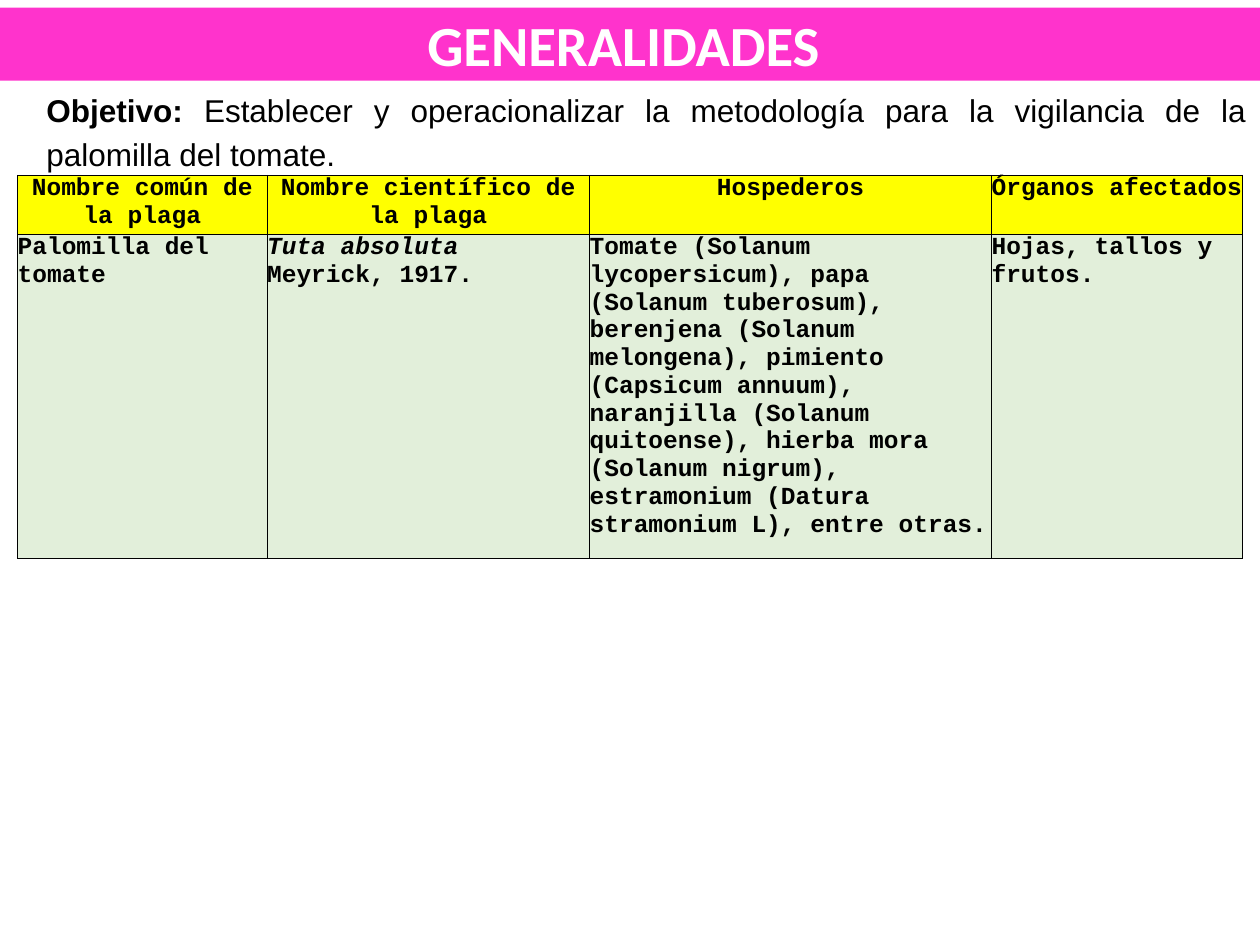
from lxml.etree import SubElement
from pptx import Presentation
from pptx.dml.color import RGBColor
from pptx.enum.text import MSO_ANCHOR, MSO_AUTO_SIZE, PP_ALIGN
from pptx.oxml.ns import qn
from pptx.util import Inches, Pt

PINK = RGBColor(0xFF, 0x33, 0xCC)
YELLOW = RGBColor(0xFF, 0xFF, 0x00)
GREEN = RGBColor(0xE2, 0xEF, 0xDA)
WHITE = RGBColor(0xFF, 0xFF, 0xFF)
BLACK = RGBColor(0x00, 0x00, 0x00)


def add_run(paragraph, text, font_name, size, color=BLACK, bold=True, italic=False):
    run = paragraph.add_run()
    run.text = text
    run.font.name = font_name
    run.font.size = Pt(size)
    run.font.color.rgb = color
    run.font.bold = bold
    run.font.italic = italic


def add_borders(cell):
    """Draw a thin black line on all four sides of the cell."""
    properties = cell._tc.get_or_add_tcPr()
    for side in ("a:lnL", "a:lnR", "a:lnT", "a:lnB"):
        line = SubElement(properties, qn(side), w=str(Pt(0.5)))
        fill = SubElement(line, qn("a:solidFill"))
        SubElement(fill, qn("a:srgbClr"), val=str(BLACK))


presentation = Presentation()
presentation.slide_width = Inches(10)
presentation.slide_height = Inches(7.5)
slide = presentation.slides.add_slide(presentation.slide_layouts[5])

# Title band
title = slide.shapes.title
title.left, title.top = Inches(0), Inches(0.06)
title.width, title.height = Inches(10), Inches(0.58)
title.fill.solid()
title.fill.fore_color.rgb = PINK
title.text_frame.auto_size = MSO_AUTO_SIZE.NONE
title.text_frame.vertical_anchor = MSO_ANCHOR.MIDDLE
paragraph = title.text_frame.paragraphs[0]
paragraph.alignment = PP_ALIGN.CENTER
add_run(paragraph, "GENERALIDADES ", "Calibri", 32.4, WHITE)

# Objective
objective = slide.shapes.add_textbox(Inches(0.27), Inches(0.63), Inches(9.72), Inches(0.8))
objective.text_frame.word_wrap = True
paragraph = objective.text_frame.paragraphs[0]
paragraph.alignment = PP_ALIGN.JUSTIFY
paragraph.line_spacing = 1.15
add_run(paragraph, "Objetivo: ", "Arial", 18)
add_run(paragraph, "Establecer y operacionalizar la metodología para la vigilancia "
        "de la palomilla del tomate.", "Arial", 18, bold=False)

# Pest table: each cell is a list of (text, italic) pieces
rows = [
    [
        [("Nombre común de la plaga", False)],
        [("Nombre científico de la plaga", False)],
        [("Hospederos", False)],
        [("Órganos afectados", False)],
    ],
    [
        [("Palomilla del tomate", False)],
        [("Tuta absoluta ", True), ("Meyrick, 1917.", False)],
        [("Tomate (Solanum lycopersicum), papa (Solanum tuberosum), "
          "berenjena (Solanum melongena), pimiento (Capsicum annuum), "
          "naranjilla (Solanum quitoense), hierba mora (Solanum nigrum), "
          "estramonium (Datura stramonium L), entre otras.", False)],
        [("Hojas, tallos y frutos.", False)],
    ],
]
row_styles = [(0.47, YELLOW, PP_ALIGN.CENTER), (2.57, GREEN, PP_ALIGN.LEFT)]

table = slide.shapes.add_table(
    2, 4, Inches(0.14), Inches(1.39), Inches(9.72), Inches(3.04)).table
for column, width in zip(table.columns, (1.98, 2.56, 3.19, 1.99)):
    column.width = Inches(width)

for row, contents, (height, color, alignment) in zip(table.rows, rows, row_styles):
    row.height = Inches(height)
    for cell, pieces in zip(row.cells, contents):
        cell.margin_left = cell.margin_right = Inches(0)
        cell.margin_top = cell.margin_bottom = Inches(0)
        add_borders(cell)
        cell.fill.solid()
        cell.fill.fore_color.rgb = color
        paragraph = cell.text_frame.paragraphs[0]
        paragraph.alignment = alignment
        for text, italic in pieces:
            add_run(paragraph, text, "Courier New", 14, italic=italic)

presentation.save("out.pptx")
